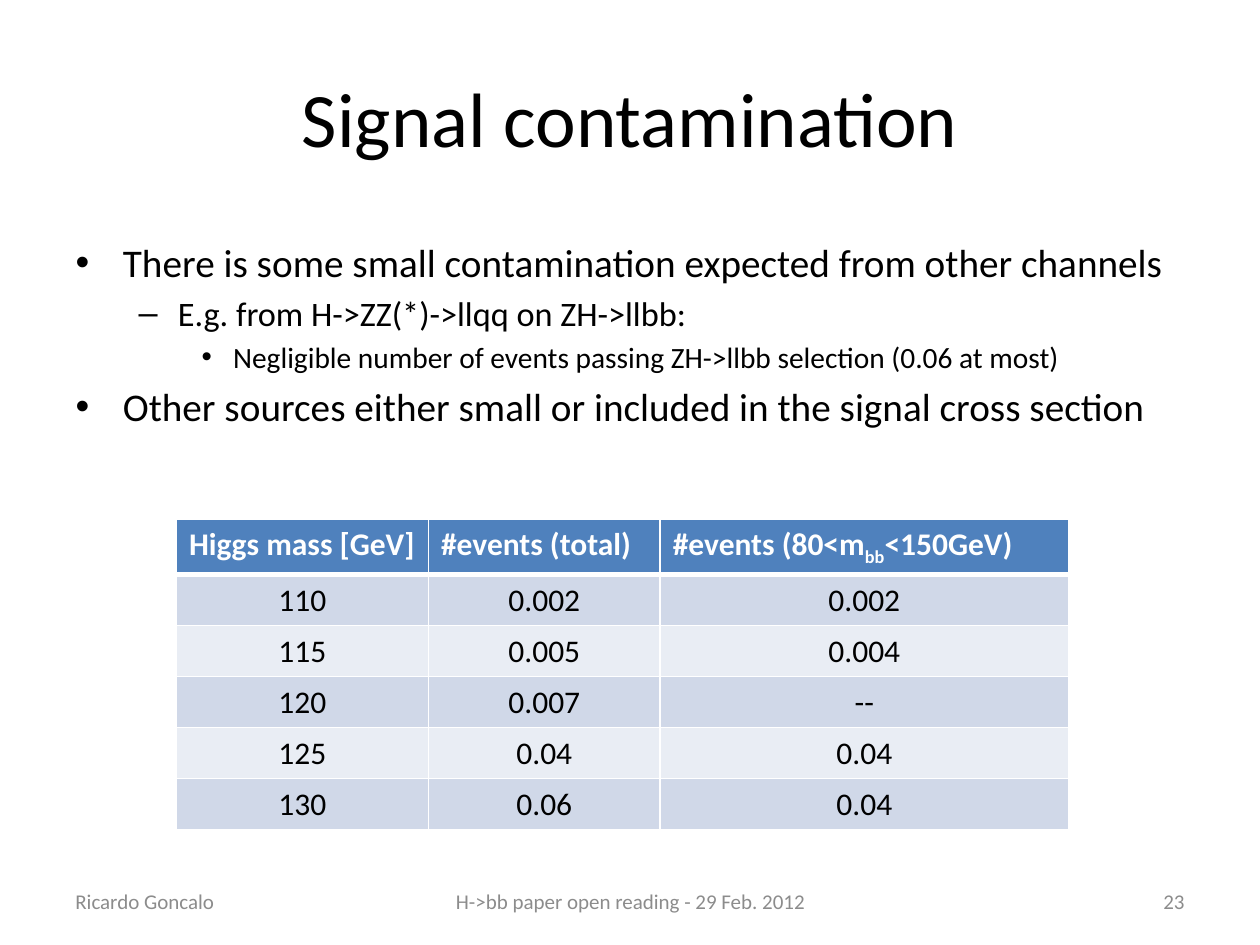
from lxml import etree
from pptx import Presentation
from pptx.dml.color import RGBColor
from pptx.enum.text import MSO_ANCHOR, MSO_AUTO_SIZE, PP_ALIGN
from pptx.oxml.ns import qn
from pptx.util import Inches, Pt

LEFT, CENTER, RIGHT = PP_ALIGN.LEFT, PP_ALIGN.CENTER, PP_ALIGN.RIGHT
MIDDLE = MSO_ANCHOR.MIDDLE
NO_FIT = MSO_AUTO_SIZE.NONE

BLACK, WHITE, GRAY = "000000", "FFFFFF", "8C8C8C"
BLUE, BANDS = "4F81BD", ("D0D8E8", "E9EDF4")

POINTS = [
    (0, "There is some small contamination expected from other channels"),
    (1, "E.g. from H->ZZ(*)->llqq on ZH->llbb:"),
    (2, "Negligible number of events passing ZH->llbb selection (0.06 at most)"),
    (0, "Other sources either small or included in the signal cross section"),
]
SIZES = (22.4, 19.6, 16.8)

# Each heading is a list of (text, is subscript)
HEADS = [
    [("Higgs mass [GeV]", False)],
    [("#events (total)", False)],
    [("#events (80<m", False), ("bb", True), ("<150GeV)", False)],
]
ROWS = [
    ("110", "0.002", "0.002"),
    ("115", "0.005", "0.004"),
    ("120", "0.007", "--"),
    ("125", "0.04", "0.04"),
    ("130", "0.06", "0.04"),
]
WIDTHS = (2.0, 1.84, 3.24)

FOOTERS = [
    (0.5, 2.33, "Ricardo Goncalo", LEFT),
    (3.42, 3.17, "H->bb paper open reading - 29 Feb. 2012", CENTER),
    (7.17, 2.33, "23", RIGHT),
]


def color(code):
    return RGBColor.from_string(code)


class Deck:
    face = "Calibri"

    def __init__(self, prs):
        self.slide = prs.slides.add_slide(prs.slide_layouts[1])

    def style(self, para, size, code, align=None, bold=False):
        para.alignment = align
        font = para.font
        font.name, font.size, font.bold = self.face, Pt(size), bold
        font.color.rgb = color(code)

    def place(self, shape, left, top, width, height):
        shape.left, shape.top = Inches(left), Inches(top)
        shape.width, shape.height = Inches(width), Inches(height)

    def title(self, text, *box):
        shape = self.slide.shapes.title
        self.place(shape, *box)
        frame = shape.text_frame
        frame.text, frame.vertical_anchor = text, MIDDLE
        self.style(frame.paragraphs[0], 44, BLACK, CENTER)

    def bullets(self, points, *box):
        shape = self.slide.placeholders[1]
        self.place(shape, *box)
        frame = shape.text_frame
        frame.text = "\n".join(text for _, text in points)
        frame.auto_size = NO_FIT
        for para, (level, _) in zip(frame.paragraphs, points):
            para.level = level
            self.style(para, SIZES[level], BLACK)
        frame.paragraphs[0].space_before = Pt(0)

    def label(self, text, align, *box):
        shape = self.slide.shapes.add_textbox(*map(Inches, box))
        frame = shape.text_frame
        frame.word_wrap, frame.vertical_anchor = True, MIDDLE
        frame.text = text
        self.style(frame.paragraphs[0], 12, GRAY, align)

    def border(self, cell, side, width):
        props = cell._tc.get_or_add_tcPr()
        line = etree.SubElement(props, qn("a:" + side), w=str(Pt(width)))
        fill = etree.SubElement(line, qn("a:solidFill"))
        etree.SubElement(fill, qn("a:srgbClr"), val=WHITE)

    def cell(self, cell, parts, fill, code, align, bold, edge):
        para = cell.text_frame.paragraphs[0]
        for text, sub in parts:
            run = para.add_run()
            run.text = text
            if sub:
                run._r.get_or_add_rPr().set("baseline", "-25000")
        self.style(para, 18, code, align, bold)
        # Borders come before the fill in the cell properties
        for side, width in zip(("lnL", "lnR", "lnT", "lnB"), (1, 1, *edge)):
            self.border(cell, side, width)
        cell.fill.solid()
        cell.fill.fore_color.rgb = color(fill)

    def table(self, heads, rows, widths, left, top, height):
        box = map(Inches, (left, top, sum(widths), height))
        table = self.slide.shapes.add_table(
            len(rows) + 1, len(heads), *box).table
        for col, width in zip(table.columns, widths):
            col.width = Inches(width)
        for c, parts in enumerate(heads):
            self.cell(table.cell(0, c), parts, BLUE, WHITE, LEFT, True, (1, 3))
        for r, row in enumerate(rows):
            edge = (1 if r else 3, 1)
            for c, text in enumerate(row):
                self.cell(table.cell(r + 1, c), [(text, False)],
                          BANDS[r % 2], BLACK, CENTER, False, edge)


def main():
    prs = Presentation()
    prs.slide_width, prs.slide_height = Inches(10), Inches(7.5)
    deck = Deck(prs)

    # Title and list
    deck.title("Signal contamination", 0.5, 0.3, 9, 1.25)
    deck.bullets(POINTS, 0.5, 1.84, 9, 1.7)

    # Footer line
    for left, width, text, align in FOOTERS:
        deck.label(text, align, left, 6.95, width, 0.4)

    # Event counts
    deck.table(HEADS, ROWS, WIDTHS, 1.4, 4.12, 2.43)

    prs.save("out.pptx")


if __name__ == "__main__":
    main()
